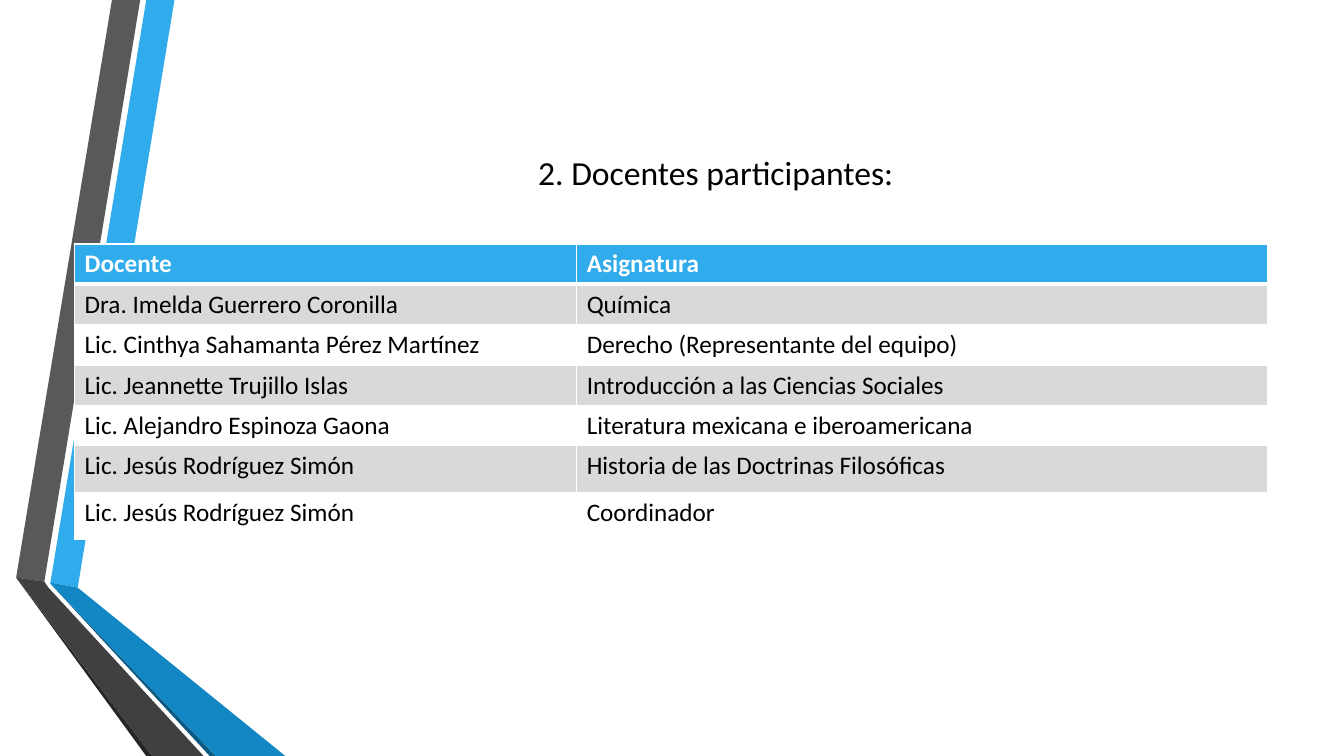
import pptx
import pptx.dml.color
import pptx.enum.text
import pptx.oxml
import pptx.oxml.ns
import pptx.util

COLORS = {
    "blue": "30ACEC", "deep_blue": "1287C3", "dark_blue": "0C5A82",
    "gray": "595959", "deep_gray": "404040", "dark_gray": "262626",
    "band": "D9D9D9", "white": "FFFFFF", "black": "000000",
}

RIBBONS = [
    ("blue", [(3.75, 77.07), (5.78, 77.73), (12.98, 0), (10.88, 0)]),
    ("gray", [(10.43, 0), (8.33, 0), (1.2, 76.4), (3.3, 76.93)]),
    ("dark_gray", [(1.2, 76.4), (10.88, 100), (11.33, 100)]),
    ("dark_blue", [(3.75, 77.2), (15.6, 100), (16.05, 100)]),
    ("deep_blue", [(3.75, 77.2), (16.05, 100), (21.23, 100), (5.78, 77.73), (3.75, 77.07)]),
    ("deep_gray", [(15.15, 100), (3.6, 77.73), (3.3, 76.93), (1.2, 76.4), (11.33, 100)]),
]

TEACHERS = [
    ("Docente", "Asignatura"),
    ("Dra. Imelda Guerrero Coronilla", "Química"),
    ("Lic. Cinthya Sahamanta Pérez Martínez", "Derecho (Representante del equipo)"),
    ("Lic. Jeannette Trujillo Islas", "Introducción a las Ciencias Sociales"),
    ("Lic. Alejandro Espinoza Gaona", "Literatura mexicana e iberoamericana"),
    ("Lic. Jesús Rodríguez Simón", "Historia de las Doctrinas Filosóficas"),
    ("Lic. Jesús Rodríguez Simón", "Coordinador"),
]


def color(name):
    return pptx.dml.color.RGBColor.from_string(COLORS[name])


class Page:
    font = "Calibri"

    def __init__(self, deck):
        self.width, self.height = deck.slide_width, deck.slide_height
        self.shapes = deck.slides.add_slide(deck.slide_layouts[6]).shapes

    def across(self, percent):
        return round(self.width * percent / 100)

    def down(self, percent):
        return round(self.height * percent / 100)

    def add_text(self, para, text, ink, **formats):
        span = para.add_run()
        span.text = text
        for name, value in {"name": self.font, **formats}.items():
            setattr(span.font, name, value)
        span.font.color.rgb = color(ink)

    def ribbon(self, fill, corners):
        points = [(self.across(x), self.down(y)) for x, y in corners]
        builder = self.shapes.build_freeform(*points[0])
        builder.add_line_segments(points[1:], close=True)
        shape = builder.convert_to_shape()
        shape.shadow.inherit = False
        shape.fill.solid()
        shape.fill.fore_color.rgb = color(fill)
        shape.line.fill.background()

    def title(self, text, left, top, width, height):
        box = self.shapes.add_textbox(
            self.across(left), self.down(top), self.across(width), self.down(height))
        frame = box.text_frame
        formats = {"word_wrap": True, "vertical_anchor": pptx.enum.text.MSO_ANCHOR.MIDDLE}
        for name, value in formats.items():
            setattr(frame, name, value)
        para = frame.paragraphs[0]
        para.alignment = pptx.enum.text.PP_ALIGN.CENTER
        self.add_text(para, text, "black", size=pptx.util.Pt(24))

    def borders(self, cell, widths):
        properties = cell._tc.get_or_add_tcPr()
        for side, points in widths.items():
            properties.append(pptx.oxml.parse_xml(
                f'<a:ln{side} {pptx.oxml.ns.nsdecls("a")} w="{pptx.util.Pt(points)}">'
                f'<a:solidFill><a:srgbClr val="{COLORS["white"]}"/></a:solidFill></a:ln{side}>'))

    def table(self, rows, left, top, widths, heights):
        table = self.shapes.add_table(
            len(rows), len(widths), self.across(left), self.down(top),
            self.across(sum(widths)), self.down(sum(heights))).table
        table.horz_banding = False
        for column, width in zip(table.columns, widths):
            column.width = self.across(width)
        for row, height in zip(table.rows, heights):
            row.height = self.down(height)
        for index, texts in enumerate(rows):
            header = index == 0
            fill = "blue" if header else ("band" if index % 2 else "white")
            sides = {"L": 1, "R": 1, "T": 3 if index == 1 else 1, "B": 3 if header else 1}
            for place, text in enumerate(texts):
                cell = table.cell(index, place)
                self.borders(cell, sides)
                cell.fill.solid()
                cell.fill.fore_color.rgb = color(fill)
                self.add_text(cell.text_frame.paragraphs[0], text,
                              "white" if header else "black",
                              size=pptx.util.Pt(18), bold=header)


def main():
    deck = pptx.Presentation()
    deck.slide_width = pptx.util.Inches(13.33)
    deck.slide_height = pptx.util.Inches(7.5)
    page = Page(deck)
    for fill, corners in RIBBONS:
        page.ribbon(fill, corners)
    page.title("2. Docentes participantes:", 12.15, 10, 82.22, 25.6)
    page.table(TEACHERS, 5.55, 32.27, [37.36, 51.39], [5.33] * 5 + [6.2] * 2)
    deck.save("out.pptx")


if __name__ == "__main__":
    main()
